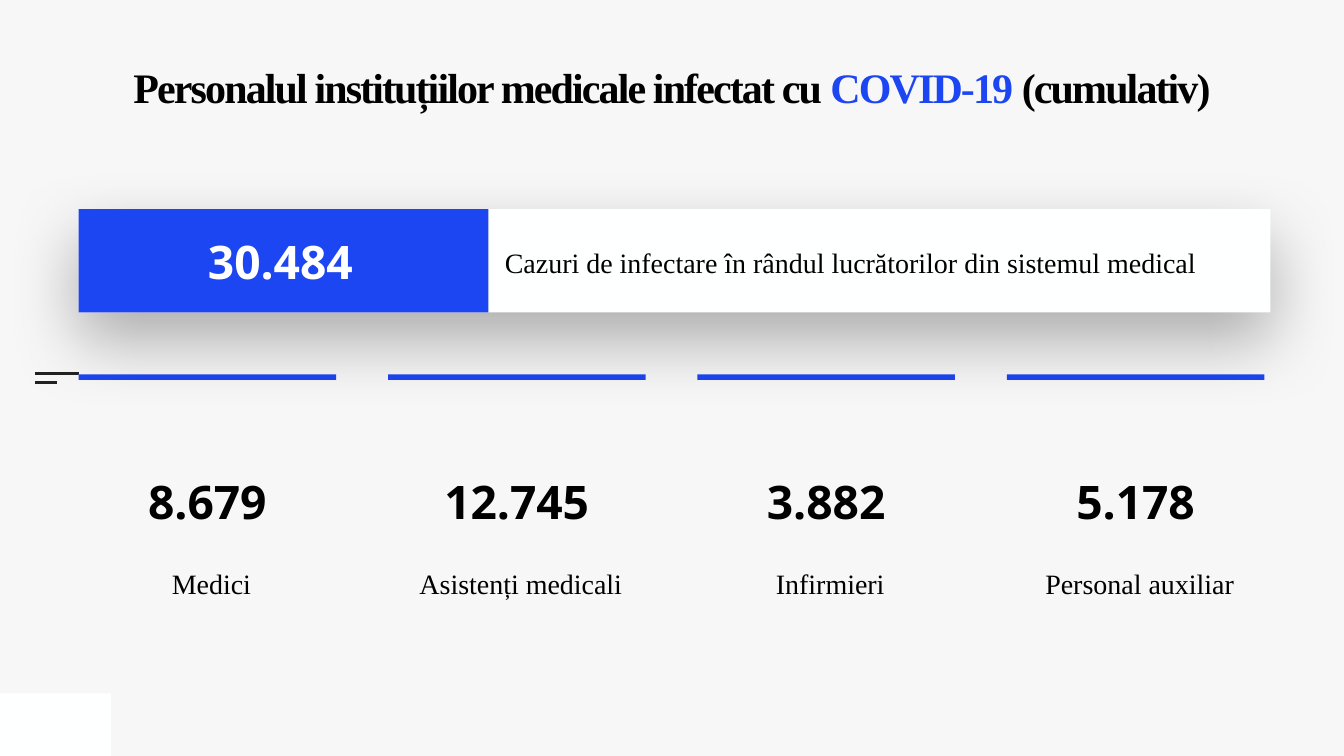
"""Builds a slide on medical staff infected with COVID-19."""
from dataclasses import dataclass

from lxml.etree import SubElement
from pptx import Presentation
from pptx.dml.color import RGBColor
from pptx.enum.shapes import MSO_CONNECTOR, MSO_SHAPE
from pptx.enum.text import MSO_ANCHOR, MSO_AUTO_SIZE, PP_ALIGN
from pptx.oxml.ns import qn
from pptx.shapes.autoshape import Shape
from pptx.shapes.shapetree import GroupShapes, SlideShapes
from pptx.text.text import TextFrame, _Paragraph, _Run
from pptx.util import Inches, Pt

BLUE = RGBColor(0x1D, 0x46, 0xF3)
BLACK = RGBColor(0, 0, 0)
WHITE = RGBColor(0xFF, 0xFF, 0xFF)
PANEL = RGBColor(0xFE, 0xFF, 0xFF)
PAPER = RGBColor(0xF7, 0xF7, 0xF7)
INK = RGBColor(0x22, 0x22, 0x22)

SERIF, SANS = "Times New Roman", "Open Sans"
WIDTH, HEIGHT = 26.67, 15
LEFT, COLUMN_PITCH, COLUMN_WIDTH = 1.56, 6.14, 5.11
CARD_TOP, CARD_HEIGHT, RULE_HEIGHT = 7.43, 5.35, 0.11
FIGURE_TOP, FIGURE_HEIGHT = 9.28, 1.31
BANNER_TOP, BANNER_WIDTH, BANNER_HEIGHT = 4.15, 23.65, 2.05


@dataclass(frozen=True)
class Area:
    """A rectangle in inches."""
    left: float
    top: float
    width: float
    height: float

    def lengths(self) -> list[int]:
        """Return left, top, width and height as slide lengths."""
        return [Inches(value) for value in (self.left, self.top, self.width, self.height)]


@dataclass(frozen=True)
class Category:
    """A staff category and its number of cases."""
    name: str
    cases: str


CATEGORIES = (
    Category("Medici", "8.679"),
    Category("Asistenți medicali", "12.745"),
    Category("Infirmieri", "3.882"),
    Category("Personal auxiliar", "5.178"),
)


def add_span(para: _Paragraph, text: str, size: float, font: str,
             color: RGBColor, bold: bool = False) -> _Run:
    """Append one formatted run to a paragraph."""
    span = para.add_run()
    span.text = text
    span.font.size = Pt(size)
    span.font.name = font
    span.font.bold = bold
    span.font.color.rgb = color
    return span


def set_margins(frame: TextFrame, left: float, top: float, right: float, bottom: float) -> None:
    """Set the four insets of a text frame in inches."""
    frame.margin_left, frame.margin_top = Inches(left), Inches(top)
    frame.margin_right, frame.margin_bottom = Inches(right), Inches(bottom)


def add_block(shapes: GroupShapes | SlideShapes, area: Area, color: RGBColor) -> Shape:
    """Draw a plain filled rectangle."""
    block = shapes.add_shape(MSO_SHAPE.RECTANGLE, *area.lengths())
    block.shadow.inherit = False
    block.fill.solid()
    block.fill.fore_color.rgb = color
    block.line.fill.background()
    return block


def add_text(shapes: GroupShapes | SlideShapes, area: Area, text: str, size: float, font: str,
             color: RGBColor, align: PP_ALIGN = PP_ALIGN.CENTER, bold: bool = True) -> None:
    """Draw a line of text centred vertically in its box."""
    box = shapes.add_textbox(*area.lengths())
    frame = box.text_frame
    frame.word_wrap = True
    frame.auto_size = MSO_AUTO_SIZE.SHAPE_TO_FIT_TEXT
    frame.vertical_anchor = MSO_ANCHOR.MIDDLE
    set_margins(frame, 0.1, 0.1, 0.1, 0.1)
    para = frame.paragraphs[0]
    para.alignment = align
    add_span(para, text, size, font, color, bold)


def add_soft_shadow(block: Shape) -> None:
    """Cast a wide soft shadow straight down."""
    effects = block._element.spPr.find(qn("a:effectLst"))
    shadow = SubElement(effects, qn("a:outerShdw"), blurRad=str(Pt(100)), dist=str(Pt(40)),
                        dir="5400000", algn="t", rotWithShape="0")
    color = SubElement(shadow, qn("a:srgbClr"), val="000000")
    SubElement(color, qn("a:alpha"), val="30000")


def add_dash(shapes: SlideShapes, top: float, length: float) -> None:
    """Draw a short horizontal line in the left margin."""
    start = 0.69
    line = shapes.add_connector(MSO_CONNECTOR.STRAIGHT, Inches(start), Inches(top),
                                Inches(start + length), Inches(top))
    line.line.color.rgb = INK
    line.line.width = Pt(3)
    SubElement(line._element.spPr, qn("a:effectLst"))


def format_title(title: Shape) -> None:
    """Place the title and fill it run by run."""
    title.left, title.top, title.width, title.height = Area(0, 1.42, WIDTH, 0.81).lengths()
    frame = title.text_frame
    frame.auto_size = MSO_AUTO_SIZE.NONE
    frame.vertical_anchor = MSO_ANCHOR.TOP
    set_margins(frame, 0, 0, 0, 0)
    para = frame.paragraphs[0]
    para.alignment = PP_ALIGN.CENTER
    para.line_spacing = 0.8
    for text, color in (("Personalul instituțiilor medicale infectat cu ", BLACK),
                        ("COVID-19 ", BLUE), ("(cumulativ)", BLACK)):
        span = add_span(para, text, 60, SERIF, color, bold=True)
        span._r.get_or_add_rPr().set("spc", "-270")


def add_card(shapes: SlideShapes, column: int, category: Category) -> None:
    """Draw a category card with its blue rule and label."""
    left = LEFT + column * COLUMN_PITCH
    group = shapes.add_group_shape().shapes
    card = add_block(group, Area(left, CARD_TOP, COLUMN_WIDTH, CARD_HEIGHT), PAPER)
    frame = card.text_frame
    frame.word_wrap = True
    frame.vertical_anchor = MSO_ANCHOR.BOTTOM
    set_margins(frame, 0.55, 0.71, 0.39, 0.87)
    para = frame.paragraphs[0]
    para.alignment = PP_ALIGN.CENTER
    para.line_spacing = 1.3
    para.space_before = Pt(20)
    add_span(para, category.name, 40, SERIF, BLACK)
    add_block(group, Area(left, CARD_TOP, COLUMN_WIDTH, RULE_HEIGHT), BLUE)


def add_banner(shapes: SlideShapes) -> None:
    """Draw the banner with the total number of cases."""
    group = shapes.add_group_shape().shapes
    panel = add_block(group, Area(LEFT, BANNER_TOP, BANNER_WIDTH, BANNER_HEIGHT), PANEL)
    add_soft_shadow(panel)
    add_text(group, Area(9.92, 4.77, 15.34, 0.88),
             "Cazuri de infectare în rândul lucrătorilor din sistemul medical",
             40, SERIF, BLACK, PP_ALIGN.LEFT, bold=False)
    add_block(group, Area(LEFT, BANNER_TOP, 8.13, BANNER_HEIGHT), BLUE)
    add_text(group, Area(LEFT, 4.52, 8.01, FIGURE_HEIGHT), "30.484", 66, SANS, WHITE)


def main() -> None:
    """Build and save the deck."""
    deck = Presentation()
    deck.slide_width, deck.slide_height = Inches(WIDTH), Inches(HEIGHT)
    page = deck.slides.add_slide(deck.slide_layouts[5])
    page.background.fill.solid()
    page.background.fill.fore_color.rgb = PAPER
    format_title(page.shapes.title)
    add_block(page.shapes, Area(0, HEIGHT - 1.24, 2.2, 1.24), PANEL)
    add_dash(page.shapes, 7.41, 0.88)
    add_dash(page.shapes, 7.59, 0.44)
    for column, category in enumerate(CATEGORIES):
        add_card(page.shapes, column, category)
    add_banner(page.shapes)
    for column, category in enumerate(CATEGORIES):
        area = Area(LEFT + column * COLUMN_PITCH, FIGURE_TOP, COLUMN_WIDTH, FIGURE_HEIGHT)
        add_text(page.shapes, area, category.cases, 66, SANS, BLACK)
    deck.save("out.pptx")


if __name__ == "__main__":
    main()
